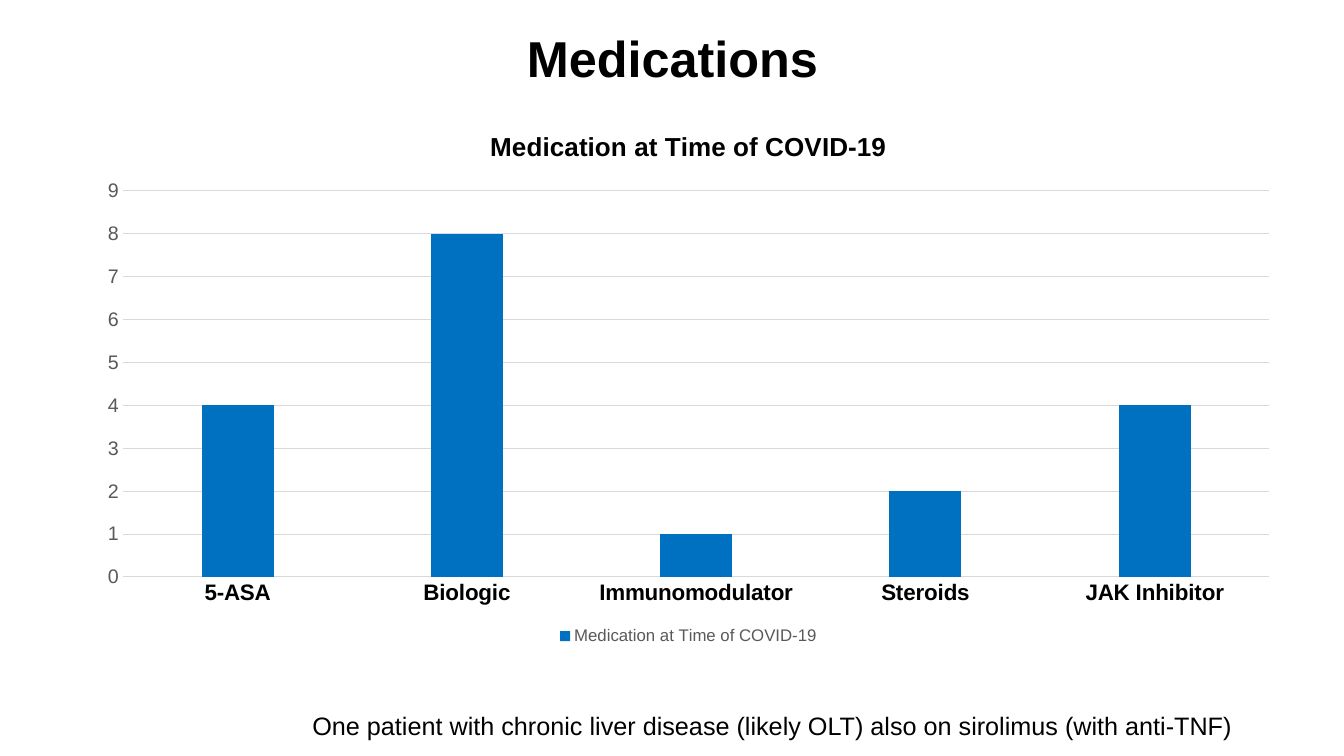
from dataclasses import dataclass

from pptx import Presentation
from pptx.chart.data import CategoryChartData
from pptx.dml.color import RGBColor
from pptx.enum.chart import XL_CHART_TYPE as ChartType, XL_LEGEND_POSITION as LegendPosition
from pptx.enum.chart import XL_TICK_MARK as TickMark
from pptx.enum.text import MSO_ANCHOR as Anchor, PP_ALIGN as Align
from pptx.util import Inches, Pt


@dataclass(frozen=True)
class Theme:
    font: str = "Arial"
    black: str = "000000"
    gray: str = "595959"
    grid: str = "D9D9D9"
    bar: str = "0070C0"
    heading_size: float = 36
    chart_title_size: float = 18.6
    note_size: float = 18
    category_size: float = 16
    value_size: float = 14
    legend_size: float = 12
    chart_size: float = 10
    line_width: float = 0.75


theme = Theme()


def style_font(font, size, color=theme.black, bold=False):
    font.name = theme.font
    font.size = Pt(size)
    font.bold = bold
    font.color.rgb = RGBColor.from_string(color)


def add_text(text, left, top, width, height, size, bold=False, align=Align.LEFT, anchor=Anchor.TOP):
    box = slide.shapes.add_textbox(Inches(left), Inches(top), Inches(width), Inches(height))
    frame = box.text_frame
    frame.word_wrap = True
    frame.vertical_anchor = anchor
    paragraph = frame.paragraphs[0]
    paragraph.alignment = align
    run = paragraph.add_run()
    run.text = text
    style_font(run.font, size, bold=bold)


presentation = Presentation()
presentation.slide_width = Inches(13.33)
presentation.slide_height = Inches(7.5)
slide = presentation.slides.add_slide(presentation.slide_layouts[6])

# Heading
add_text("Medications", 0.67, 0.3, 12, 0.53, theme.heading_size,
         bold=True, align=Align.CENTER, anchor=Anchor.MIDDLE)

# Medication counts
counts_title = "Medication at Time of COVID-19"
counts = CategoryChartData()
counts.categories = ["5-ASA", "Biologic", "Immunomodulator", "Steroids", "JAK Inhibitor"]
counts.add_series(counts_title, [4, 8, 1, 2, 4])
chart = slide.shapes.add_chart(ChartType.COLUMN_CLUSTERED, Inches(0.83), Inches(1.07),
                               Inches(12), Inches(5.37), counts).chart
style_font(chart.font, theme.chart_size)

# Chart title and legend
chart.has_title = True
chart.chart_title.include_in_layout = False
title_run = chart.chart_title.text_frame.paragraphs[0].add_run()
title_run.text = counts_title
style_font(title_run.font, theme.chart_title_size, bold=True)
chart.has_legend = True
chart.legend.position = LegendPosition.BOTTOM
chart.legend.include_in_layout = False
style_font(chart.legend.font, theme.legend_size, theme.gray)

# Bars
bars = chart.plots[0]
bars.gap_width = 219
bars.overlap = -27
bars.vary_by_categories = False
bar_fill = bars.series[0].format.fill
bar_fill.solid()
bar_fill.fore_color.rgb = RGBColor.from_string(theme.bar)

# Axes and gridlines
medications, patients = chart.category_axis, chart.value_axis
for axis in (medications, patients):
    axis.major_tick_mark = axis.minor_tick_mark = TickMark.NONE
style_font(medications.tick_labels.font, theme.category_size, bold=True)
style_font(patients.tick_labels.font, theme.value_size, theme.gray)
patients.minimum_scale, patients.maximum_scale, patients.major_unit = 0, 9, 1
patients.has_major_gridlines = True
patients.format.line.fill.background()
for line in (medications.format.line, patients.major_gridlines.format.line):
    line.color.rgb = RGBColor.from_string(theme.grid)
    line.width = Pt(theme.line_width)

# Patient note
add_text("One patient with chronic liver disease (likely OLT) also on sirolimus (with anti-TNF)",
         3, 7, 10, 0.4, theme.note_size)

presentation.save("out.pptx")
